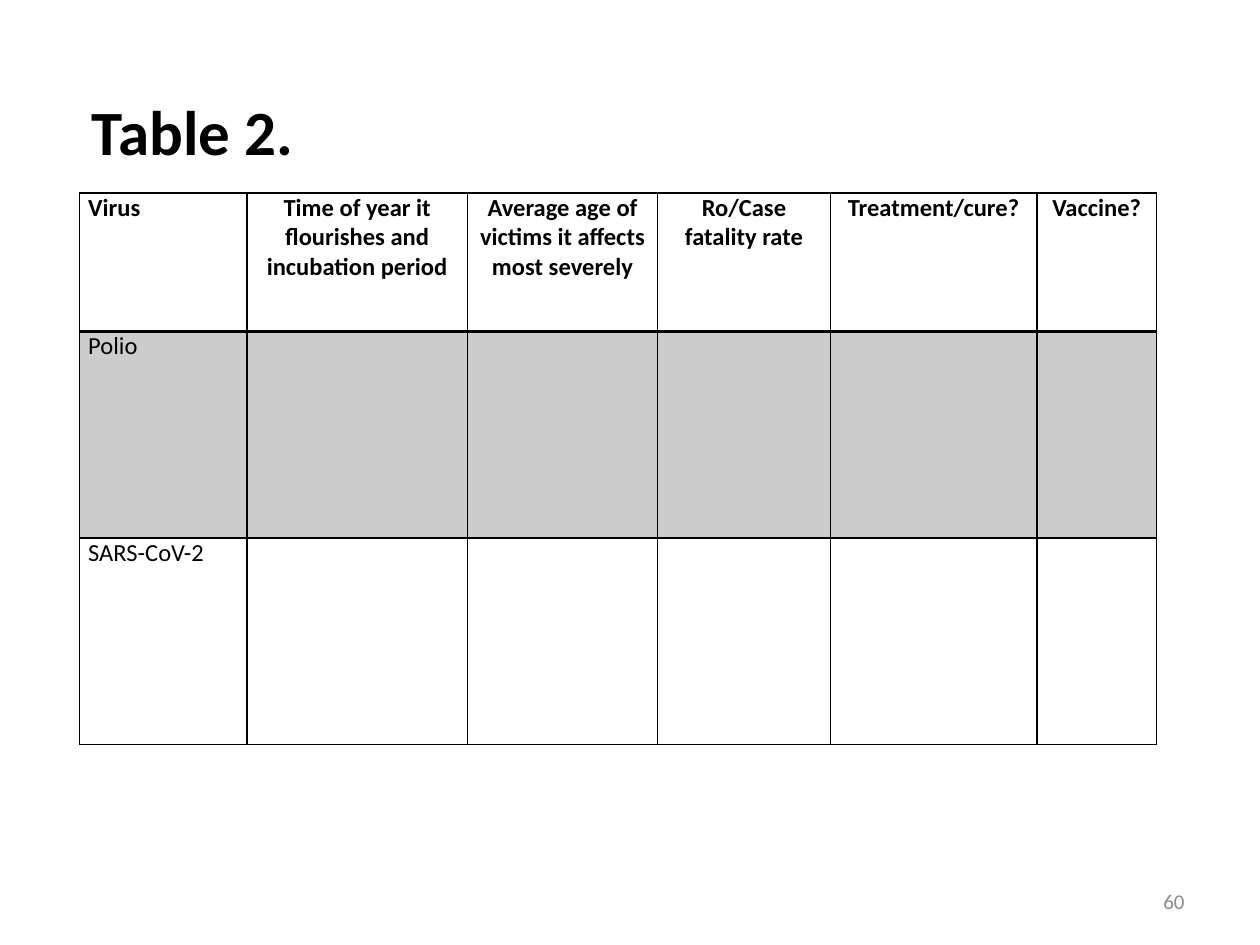
from lxml.etree import SubElement
from pptx import Presentation
from pptx.dml.color import RGBColor
from pptx.enum.text import MSO_ANCHOR as Anchor, PP_ALIGN as Align
from pptx.oxml.ns import qn
from pptx.util import Inches, Pt

# Content
TITLE = "Table 2."
PAGE_NUMBER = "60"
ROWS = [
    ["Virus", "Time of year it flourishes and incubation period",
     "Average age of victims it affects most severely",
     "Ro/Case fatality rate", "Treatment/cure?", "Vaccine?"],
    ["Polio", "", "", "", "", ""],
    ["SARS-CoV-2", "", "", "", "", ""],
]
COLUMN_WIDTHS = [1.33, 1.75, 1.51, 1.37, 1.64, 0.95]
ROW_HEIGHTS = [1.1, 1.64, 1.64]
COLORS = {"text": "000000", "border": "000000", "number": "8C8C8C",
          "shaded": "CCCCCC", "plain": "FFFFFF"}
FONT = "Calibri"


def write_text(frame, text, size=14, bold=False, color="text",
               align=Align.LEFT, space_after=0):
    paragraph = frame.paragraphs[0]
    paragraph.alignment = align
    paragraph.space_after = Pt(space_after)
    run = paragraph.add_run()
    run.text = text
    run.font.name = FONT
    run.font.size = Pt(size)
    run.font.bold = bold
    run.font.color.rgb = RGBColor.from_string(COLORS[color])


def set_borders(cell, widths):
    properties = cell._tc.get_or_add_tcPr()
    for side, width in widths.items():
        line = SubElement(properties, qn(f"a:ln{side}"), w=str(Pt(width)))
        fill = SubElement(line, qn("a:solidFill"))
        SubElement(fill, qn("a:srgbClr"), val=COLORS["border"])


presentation = Presentation()
presentation.slide_width, presentation.slide_height = Inches(10), Inches(7.5)
slide = presentation.slides.add_slide(presentation.slide_layouts[5])

# Title
title = slide.shapes.title
title.left, title.top = Inches(0.63), Inches(0.54)
title.width, title.height = Inches(7.68), Inches(0.99)
title.text_frame.vertical_anchor = Anchor.MIDDLE
write_text(title.text_frame, TITLE, size=36, bold=True)

# Virus table
table = slide.shapes.add_table(
    len(ROWS), len(COLUMN_WIDTHS), Inches(0.63), Inches(1.53),
    Inches(sum(COLUMN_WIDTHS)), Inches(sum(ROW_HEIGHTS))).table
for column, width in zip(table.columns, COLUMN_WIDTHS):
    column.width = Inches(width)
for row, height in zip(table.rows, ROW_HEIGHTS):
    row.height = Inches(height)

for row_index, texts in enumerate(ROWS):
    is_header = row_index == 0
    for column_index, text in enumerate(texts):
        cell = table.cell(row_index, column_index)
        cell.margin_left = cell.margin_right = Inches(0.07)
        cell.margin_top = cell.margin_bottom = 0
        set_borders(cell, {"L": 1, "R": 1, "T": 2 if row_index == 1 else 1,
                           "B": 2 if is_header else 1})
        cell.fill.solid()
        shade = "shaded" if row_index == 1 else "plain"
        cell.fill.fore_color.rgb = RGBColor.from_string(COLORS[shade])
        if text:
            write_text(cell.text_frame, text, bold=is_header, space_after=12,
                       align=Align.CENTER if column_index else Align.LEFT)

# Page number
number_box = slide.shapes.add_textbox(
    Inches(7.17), Inches(6.95), Inches(2.33), Inches(0.4))
number_box.text_frame.word_wrap = True
number_box.text_frame.vertical_anchor = Anchor.MIDDLE
write_text(number_box.text_frame, PAGE_NUMBER, size=12, color="number",
           align=Align.RIGHT)

presentation.save("out.pptx")
